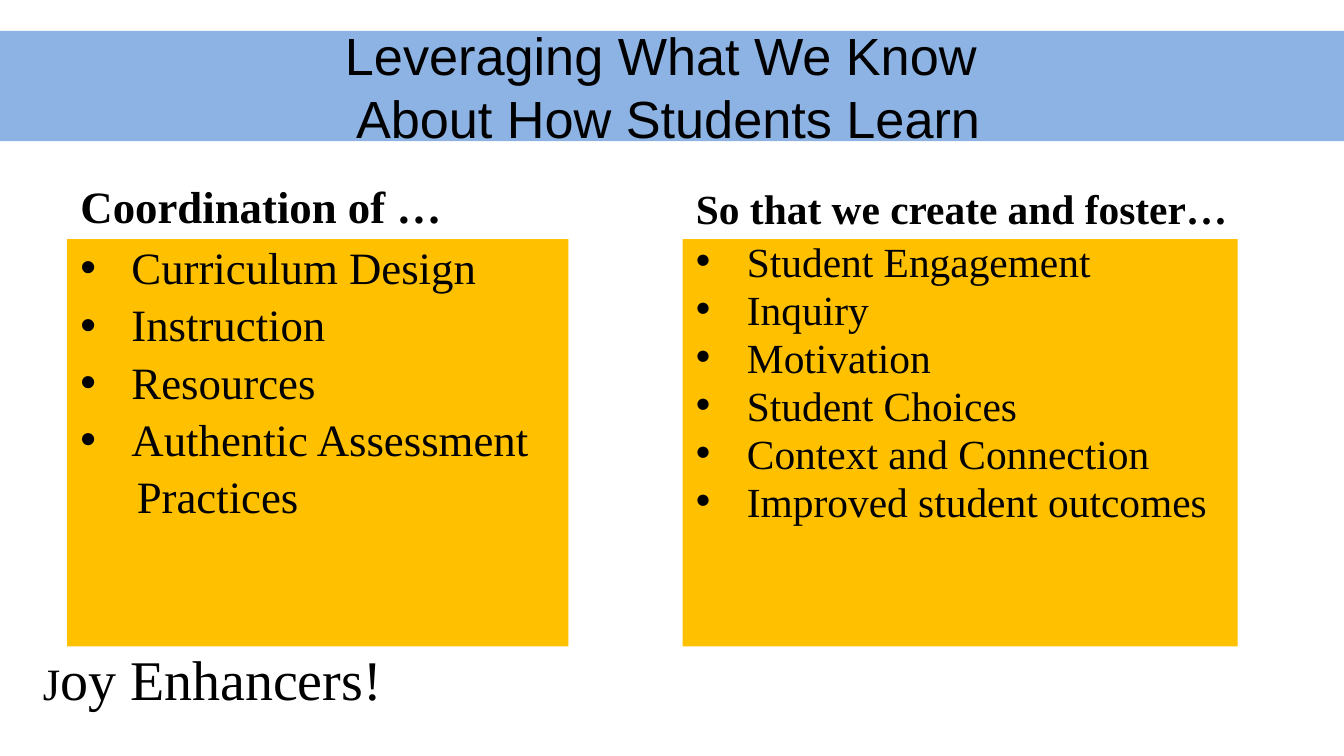
"""Build the slide on how students learn."""
from lxml.etree import SubElement
from pptx import Presentation
from pptx.dml.color import RGBColor
from pptx.enum.shapes import MSO_SHAPE
from pptx.enum.text import MSO_ANCHOR, PP_ALIGN
from pptx.oxml.ns import qn
from pptx.util import Inches, Pt

TITLE = "Leveraging What We Know \nAbout How Students Learn"
JOY = [("J", 24), ("oy Enhancers!", 30)]
LISTS = [
    {"head": "Coordination of …", "left": 0.5, "width": 3.73,
     "size": 24, "gap": 4.8, "line": 0.9,
     "items": ["Curriculum Design", "Instruction", "Resources",
               "Authentic Assessment"],
     "tail": ["Practices"]},
    {"head": "So that we create and foster…", "left": 5.08, "width": 4.13,
     "size": 22.2, "gap": 4.4, "line": 0.8,
     "items": ["Student Engagement", "Inquiry", "Motivation",
               "Student Choices", "Context and Connection",
               "Improved student outcomes"],
     "tail": []},
]
SERIF, SANS = "Times New Roman", "Arial"
BLACK, BLUE, GOLD = "000000", "8CB3E3", "FFC000"
WIDE = Inches(10)
HIGH = WIDE * 9 // 16


def color(code):
    return RGBColor.from_string(code)


def style(obj, form):
    for name, value in form.items():
        setattr(obj, name, value)


def add_box(slide, place, fill=None, anchor=MSO_ANCHOR.TOP):
    area = [Inches(n) for n in place]
    if fill:
        box = slide.shapes.add_shape(MSO_SHAPE.RECTANGLE, *area)
        box.shadow.inherit = False
        box.fill.solid()
        box.fill.fore_color.rgb = color(fill)
        box.line.fill.background()
    else:
        box = slide.shapes.add_textbox(*area)
    style(box.text_frame, {"word_wrap": True, "vertical_anchor": anchor})
    return box.text_frame


def write(para, text, size, face=SERIF, bold=False):
    para.text = text
    for run in para.runs:
        style(run.font, {"size": Pt(size), "name": face, "bold": bold})
        run.font.color.rgb = color(BLACK)


def indent(para, left, hang=0):
    props = para._p.get_or_add_pPr()
    props.set("marL", str(Inches(left)))
    props.set("indent", str(Inches(-hang)))
    if hang:
        tint = SubElement(props, qn("a:buClr"))
        SubElement(tint, qn("a:srgbClr"), val=BLACK)
        SubElement(props, qn("a:buFont"), typeface=SANS)
        SubElement(props, qn("a:buChar"), char="•")


def add_list(slide, data):
    left, size = data["left"], data["size"]
    head = add_box(slide, (left, 1.26, 4.42, 0.52), anchor=MSO_ANCHOR.BOTTOM)
    write(head.paragraphs[0], data["head"], size, bold=True)
    frame = add_box(slide, (left, 1.78, data["width"], 3.03), GOLD)
    count = len(data["items"])
    for i, text in enumerate(data["items"] + data["tail"]):
        para = frame.add_paragraph() if i else frame.paragraphs[0]
        write(para, text, size)
        style(para, {"alignment": PP_ALIGN.LEFT, "line_spacing": data["line"],
                     "space_before": Pt(data["gap"] if i else 0)})
        if i < count:
            indent(para, 0.38, 0.38)
        else:
            indent(para, 0.42)


def main():
    deck = Presentation()
    style(deck, {"slide_width": WIDE, "slide_height": HIGH})
    slide = deck.slides.add_slide(deck.slide_layouts[6])
    band = add_box(slide, (-0.06, 0.23, 10.06, 0.82), BLUE, MSO_ANCHOR.MIDDLE)
    write(band.paragraphs[0], TITLE, 28, SANS)
    band.paragraphs[0].alignment = PP_ALIGN.CENTER
    for data in LISTS:
        add_list(slide, data)
    joy = add_box(slide, (0.22, 4.75, 9.78, 0.87)).paragraphs[0]
    for text, size in JOY:
        run = joy.add_run()
        run.text = text
        style(run.font, {"size": Pt(size), "name": SERIF})
        run.font.color.rgb = color(BLACK)
    deck.save("out.pptx")


if __name__ == "__main__":
    main()
